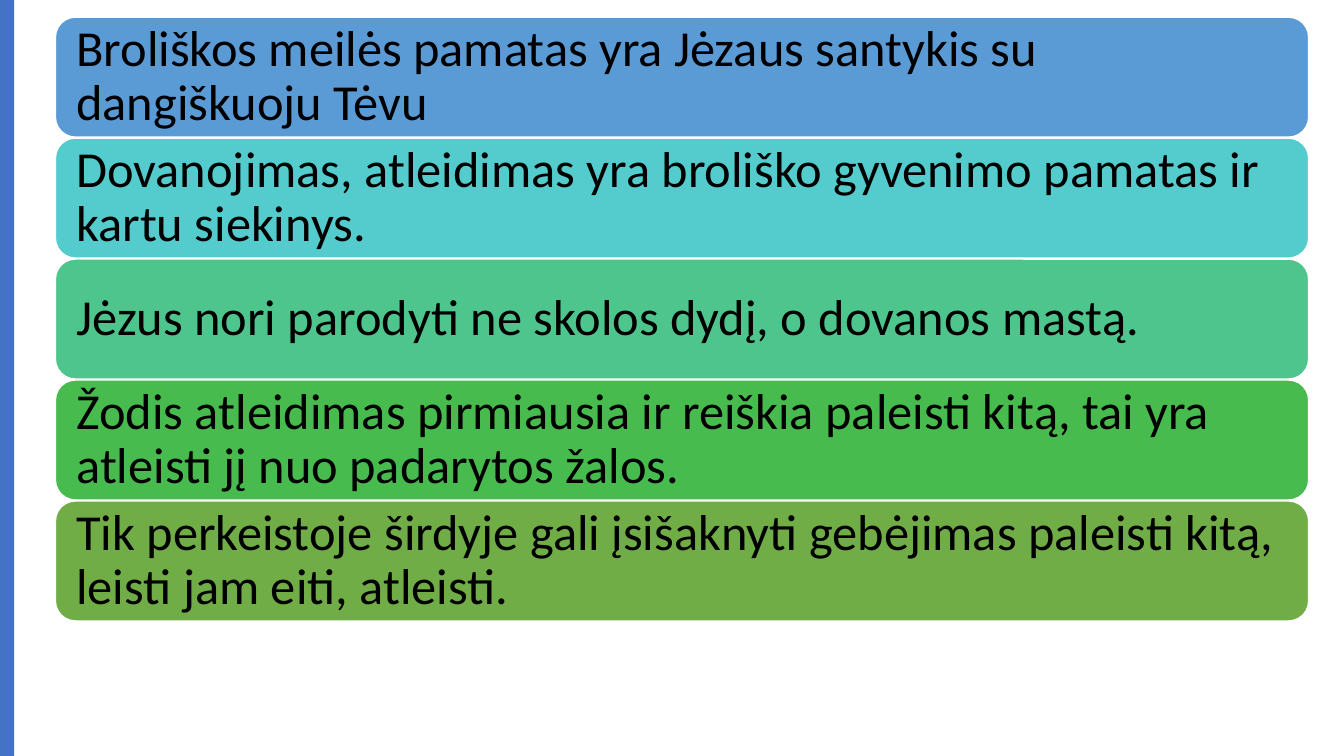
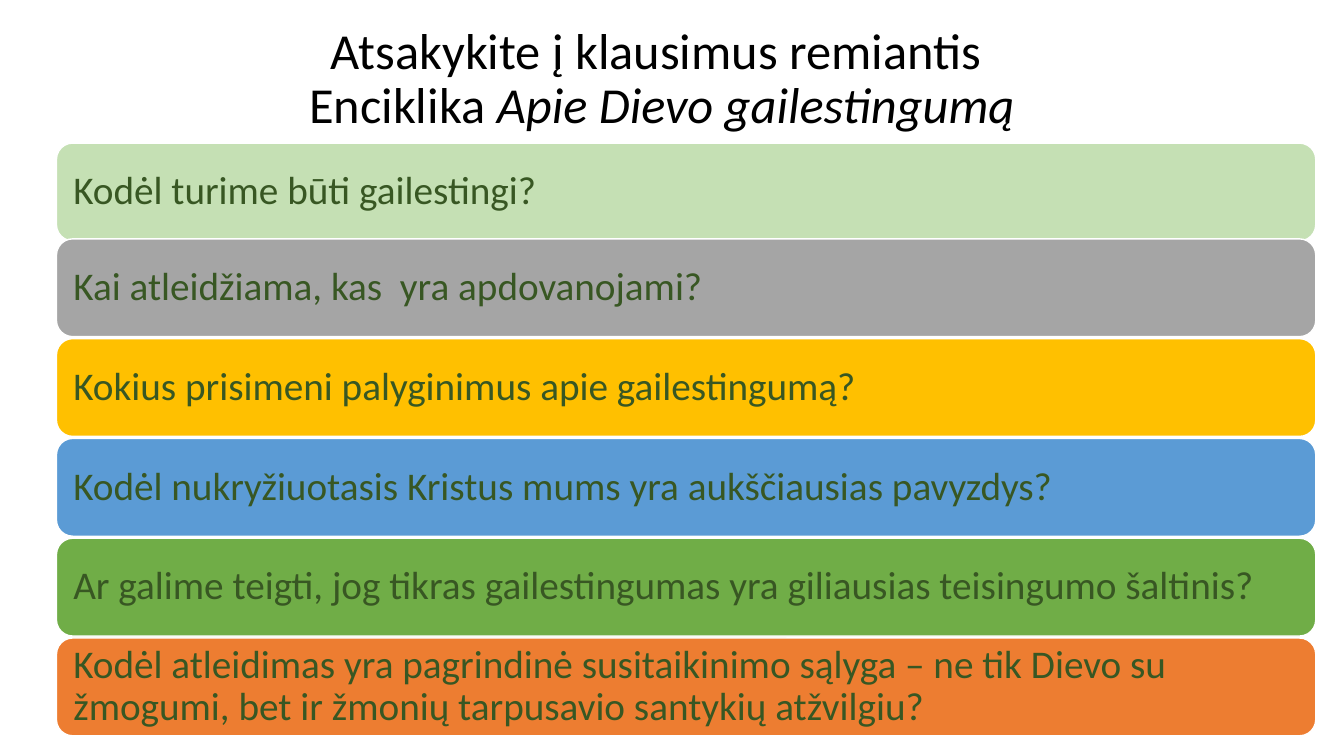
from collections import namedtuple

from pptx import Presentation
from pptx.dml.color import RGBColor
from pptx.enum.shapes import MSO_SHAPE
from pptx.enum.text import MSO_ANCHOR, MSO_AUTO_SIZE, PP_ALIGN
from pptx.util import Inches, Pt

Box = namedtuple("Box", "left top width height")
BarStyle = namedtuple("BarStyle", "height pitch margin size color")

FONT = "Calibri"
BLACK, WHITE, ACCENT = "000000", "FFFFFF", "4472C4"
BLUE, GREEN, DARK_GREEN = "5B9BD5", "70AD47", "385723"

STATEMENT_STYLE = BarStyle(1.19, 1.2, 0.15, 36, BLACK)
QUESTION_STYLE = BarStyle(0.97, 0.99, 0.12, 28, DARK_GREEN)

STATEMENTS = [
    ("Broliškos meilės pamatas yra Jėzaus santykis su dangiškuoju Tėvu", BLUE),
    ("Dovanojimas, atleidimas yra broliško gyvenimo pamatas ir kartu siekinys.", "54CCCD"),
    ("Jėzus nori parodyti ne skolos dydį, o dovanos mastą.", "4DC58D"),
    ("Žodis atleidimas pirmiausia ir reiškia paleisti kitą, tai yra atleisti jį nuo padarytos žalos.", "48BB4F"),
    ("Tik perkeistoje širdyje gali įsišaknyti gebėjimas paleisti kitą, leisti jam eiti, atleisti.", GREEN),
]

OPENING_QUESTION = [("Kodėl turime būti gailestingi?", "C5E0B4")]
QUESTIONS = [
    ("Kai atleidžiama, kas  yra apdovanojami?", "A5A5A5"),
    ("Kokius prisimeni palyginimus apie gailestingumą?", "FFC000"),
    ("Kodėl nukryžiuotasis Kristus mums yra aukščiausias pavyzdys?", BLUE),
    ("Ar galime teigti, jog tikras gailestingumas yra giliausias teisingumo šaltinis?", GREEN),
    ("Kodėl atleidimas yra pagrindinė susitaikinimo sąlyga – ne tik Dievo su žmogumi, "
     "bet ir žmonių tarpusavio santykių atžvilgiu?", "ED7D31"),
]


def rgb(value):
    return RGBColor.from_string(value)


def apply_format(target, values):
    for name, value in values.items():
        setattr(target, name, value)


def format_frame(frame, margins):
    apply_format(frame, {
        "word_wrap": True,
        "auto_size": MSO_AUTO_SIZE.NONE,
        "vertical_anchor": MSO_ANCHOR.MIDDLE,
        **margins,
    })


def add_span(para, text, size, color, italic=False):
    span = para.add_run()
    span.text = text
    apply_format(span.font, {"name": FONT, "size": Pt(size), "italic": italic})
    span.font.color.rgb = rgb(color)


def add_block(page, kind, box, fill):
    block = page.shapes.add_shape(kind, *map(Inches, box))
    block.shadow.inherit = False
    block.fill.solid()
    block.fill.fore_color.rgb = rgb(fill)
    return block


def add_side_band(page, box):
    add_block(page, MSO_SHAPE.RECTANGLE, box, ACCENT).line.fill.background()


def add_bar(page, box, text, fill, style):
    bar = add_block(page, MSO_SHAPE.ROUNDED_RECTANGLE, box, fill)
    bar.line.color.rgb = rgb(WHITE)
    bar.line.width = Pt(1)
    sides = ("left", "top", "right", "bottom")
    format_frame(bar.text_frame, {f"margin_{side}": Inches(style.margin) for side in sides})
    para = bar.text_frame.paragraphs[0]
    apply_format(para, {"alignment": PP_ALIGN.LEFT, "line_spacing": 0.9})
    add_span(para, text, style.size, style.color)


def add_bar_stack(page, left, top, width, items, style):
    for index, (text, fill) in enumerate(items):
        box = Box(left, top + index * style.pitch, width, style.height)
        add_bar(page, box, text, fill, style)


def add_title(page, box, lines):
    title = page.shapes.title
    apply_format(title, {name: Inches(value) for name, value in box._asdict().items()})
    format_frame(title.text_frame, {})
    para = title.text_frame.paragraphs[0]
    apply_format(para, {"alignment": PP_ALIGN.CENTER, "line_spacing": 0.9})
    for index, spans in enumerate(lines):
        if index:
            para.add_line_break()
        for text, italic in spans:
            add_span(para, text, 36, BLACK, italic)


def build_statements(deck):
    page = deck.slides.add_slide(deck.slide_layouts[6])
    add_side_band(page, Box(0, 0, 0.14, 7.5))
    add_bar_stack(page, 0.55, 0.17, 12.43, STATEMENTS, STATEMENT_STYLE)


def build_questions(deck):
    page = deck.slides.add_slide(deck.slide_layouts[5])
    add_title(page, Box(0.56, 0.41, 12.01, 0.77), [
        [("Atsakykite į klausimus remiantis ", False)],
        [("Enciklika ", False), ("Apie Dievo gailestingumą", True)],
    ])
    add_bar_stack(page, 0.56, 1.42, 12.49, OPENING_QUESTION, QUESTION_STYLE)
    add_bar_stack(page, 0.56, 2.37, 12.49, QUESTIONS, QUESTION_STYLE)


def main():
    deck = Presentation()
    apply_format(deck, {"slide_width": Inches(13.33), "slide_height": Inches(7.5)})
    build_statements(deck)
    build_questions(deck)
    deck.save("out.pptx")


if __name__ == "__main__":
    main()
